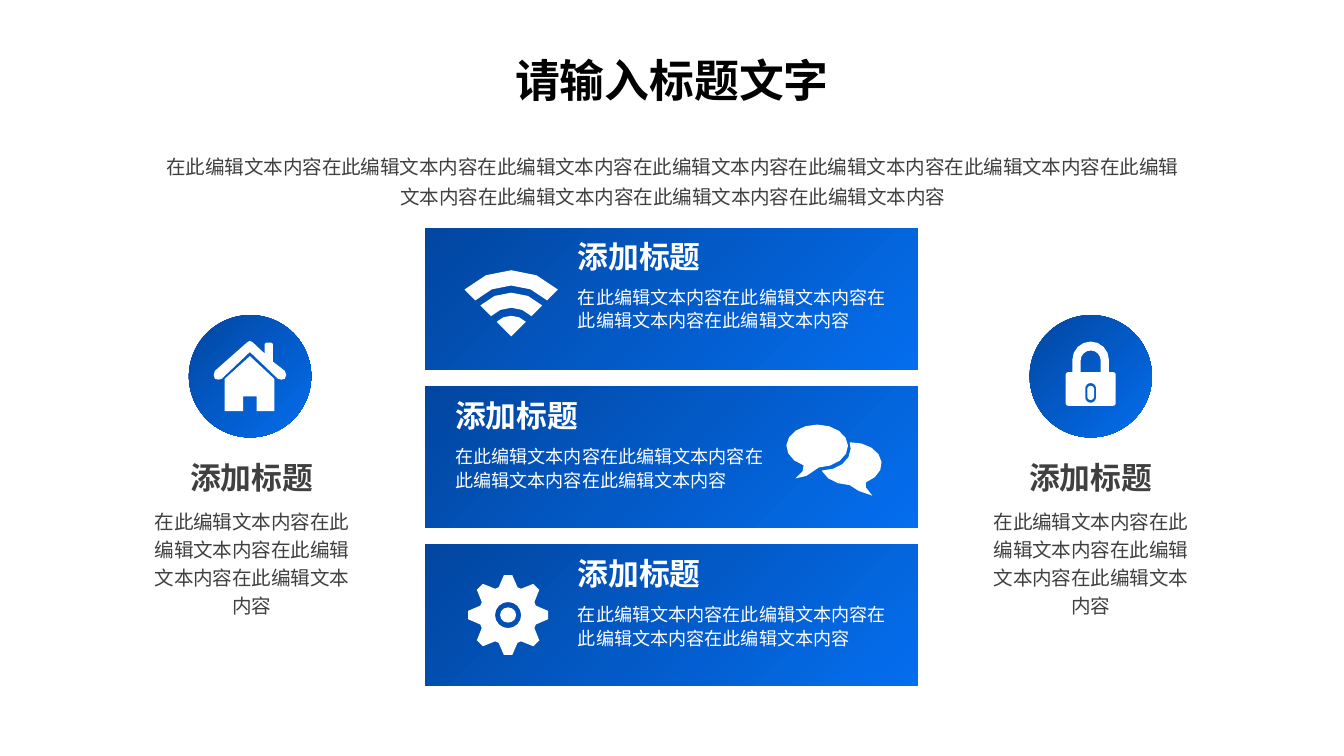
"""Build a slide of three icon panels between two icon columns."""
from dataclasses import dataclass
from math import cos, radians, sin

from lxml import etree
from pptx import Presentation
from pptx import util as u
from pptx.dml.color import RGBColor
from pptx.enum import shapes, text
from pptx.oxml import ns

FONT = "Noto Sans CJK SC"
WHITE, GREY, BLACK = "FFFFFF", "404040", "000000"
DEEP_BLUE, BRIGHT_BLUE = "0246A0", "046EEE"
PHRASE = "在此编辑文本内容"
HEADING = "添加标题"
Outline = list[tuple[float, float]]


@dataclass
class Style:
    size: float
    color: str
    bold: bool = False
    align: text.PP_ALIGN = text.PP_ALIGN.CENTER
    spacing: float = 1.0


@dataclass
class Panel:
    top: float
    text_left: float
    text_top: float


@dataclass
class Column:
    circle_left: float
    heading_left: float
    body_left: float


PANELS = (Panel(122.4, 304.2, 124.5), Panel(207, 238.5, 210), Panel(291.6, 304.2, 294.6))
COLUMNS = (Column(101.2, 89, 76.7), Column(551.6, 538.5, 526.2))


def rgb(color: str) -> RGBColor:
    return RGBColor.from_string(color)


def write(frame, words: str, style: Style, wrap: bool = True) -> None:
    frame.text = words
    frame.word_wrap = wrap
    frame.auto_size = text.MSO_AUTO_SIZE.SHAPE_TO_FIT_TEXT
    frame.vertical_anchor = text.MSO_ANCHOR.TOP
    frame.margin_left = frame.margin_right = u.Pt(5.4)
    frame.margin_top = frame.margin_bottom = u.Pt(2.7)
    paragraph = frame.paragraphs[0]
    paragraph.alignment, paragraph.line_spacing = style.align, style.spacing
    font = paragraph.font
    font.size, font.bold, font.name = u.Pt(style.size), style.bold, FONT
    font.color.rgb = rgb(style.color)
    properties = paragraph._p.pPr.find(ns.qn("a:defRPr"))
    etree.SubElement(properties, ns.qn("a:ea"), typeface=FONT)


def add_text(slide, left: float, top: float, width: float, height: float,
             words: str, style: Style) -> None:
    box = slide.shapes.add_textbox(*map(u.Pt, (left, top, width, height)))
    write(box.text_frame, words, style)


def add_blue(slide, kind, left: float, top: float, width: float, height: float) -> None:
    shape = slide.shapes.add_shape(kind, *map(u.Pt, (left, top, width, height)))
    shape.shadow.inherit = False
    shape.line.fill.background()
    shape.fill.gradient()
    shape.fill.gradient_angle = 315
    for stop, color in zip(shape.fill.gradient_stops, (DEEP_BLUE, BRIGHT_BLUE)):
        stop.color.rgb = rgb(color)


def paint_white(shape) -> None:
    shape.shadow.inherit = False
    shape.line.fill.background()
    shape.fill.solid()
    shape.fill.fore_color.rgb = rgb(WHITE)


def add_icon(slide, *outlines: Outline) -> None:
    first, *others = [[(u.Pt(x), u.Pt(y)) for x, y in outline] for outline in outlines]
    builder = slide.shapes.build_freeform(*first[0])
    builder.add_line_segments(first[1:])
    for outline in others:
        builder.move_to(*outline[0])
        builder.add_line_segments(outline[1:])
    paint_white(builder.convert_to_shape())


def arc(x: float, y: float, rx: float, ry: float, start: float, end: float) -> Outline:
    steps = max(2, round(abs(end - start) / 22.5))
    angles = [radians(start + (end - start) * i / steps) for i in range(steps + 1)]
    return [(x + rx * cos(a), y + ry * sin(a)) for a in angles]


def add_wifi(slide) -> None:
    x, y = 273.9, 180.2
    add_icon(slide, [(x, y)] + arc(x, y, 11, 11, 225, 315))
    for outer, inner in ((23.4, 15.3), (35.4, 27.2)):
        add_icon(slide, arc(x, y, outer, outer, 225, 315) + arc(x, y, inner, inner, 315, 225))


def add_chat(slide) -> None:
    add_icon(slide, arc(455.8, 248.4, 16.5, 11.5, -92, 61) + [(463.8, 261), (467.3, 265.5), (460, 263)]
             + arc(455.8, 248.4, 16.5, 11.5, 92, 160) + arc(440.6, 240.5, 15.1, 11.5, 90, 0))
    add_icon(slide, arc(437.8, 239, 16.5, 11.5, 116, 447) + [(432, 255), (426.2, 256.3), (430, 252.5)])


def add_gear(slide) -> None:
    x, y = 272.2, 329.5
    corners = ((-18.7, 15.7), (-6, 21.5), (6, 21.5), (18.7, 15.7))
    teeth = [(x + r * cos(radians(turn + a)), y + r * sin(radians(turn + a)))
             for turn in range(0, 360, 45) for a, r in corners]
    add_icon(slide, teeth, arc(x, y, 7, 7, 0, 360))
    hub = slide.shapes.add_shape(shapes.MSO_SHAPE.OVAL, *map(u.Pt, (x - 4.3, y - 4.1, 8.6, 8.2)))
    paint_white(hub)


def add_house(slide) -> None:
    body = [(133.9, 190.8), (147, 203), (147, 220.3), (137.5, 220.3), (137.5, 212.4),
            (130.3, 212.4), (130.3, 220.3), (120.4, 220.3), (120.4, 203)]
    roof = [(133.9, 188.6), (118.8, 203), (117, 203.4), (115.2, 203), (114.5, 200.9),
            (115.2, 198.7), (132.5, 183.4), (133.9, 182.6), (135.4, 183.4), (141.8, 189.4),
            (141.8, 184.3), (142.6, 183.6), (145.4, 183.6), (146.2, 184.3), (146.2, 193.7),
            (152.6, 198.7), (153.4, 200.9), (152.6, 203), (150.8, 203.4), (149, 203)]
    add_icon(slide, body, roof)


def add_lock(slide) -> None:
    x, shoulder, foot = 584.3, 199.4, 217.4
    case = (arc(x - 12, foot - 1.4, 1.4, 1.4, 90, 180) + arc(x - 12, shoulder + 1.4, 1.4, 1.4, 180, 270)
            + [(x - 9.8, shoulder)] + arc(x, 192.8, 9.8, 9.8, 180, 360) + [(x + 9.8, shoulder)]
            + arc(x + 12, shoulder + 1.4, 1.4, 1.4, 270, 360) + arc(x + 12, foot - 1.4, 1.4, 1.4, 0, 90))
    opening = [(x - 5.4, shoulder)] + arc(x, 193.2, 5.4, 5.4, 180, 360) + [(x + 5.4, shoulder)]
    slot, pin = [arc(x, 210.5 - rise, r, r, 180, 360) + arc(x, 210.5 + rise, r, r, 0, 180)
                 for rise, r in ((2.4, 2.9), (2, 1.8))]
    add_icon(slide, case, opening, slot)
    add_icon(slide, pin)


def main() -> None:
    deck = Presentation()
    deck.slide_width, deck.slide_height = u.Pt(720), u.Pt(405)
    slide = deck.slides.add_slide(deck.slide_layouts[5])

    title = slide.shapes.title
    title.left, title.top, title.width, title.height = map(u.Pt, (268.4, 25.7, 183, 35.8))
    write(title.text_frame, "请输入标题文字", Style(24, BLACK, True), wrap=False)

    for panel in PANELS:
        add_blue(slide, shapes.MSO_SHAPE.RECTANGLE, 227.8, panel.top, 264, 75.7)
    for column in COLUMNS:
        add_blue(slide, shapes.MSO_SHAPE.OVAL, column.circle_left, 168.8, 65.5, 65.5)
    for add in (add_chat, add_gear, add_wifi, add_lock, add_house):
        add(slide)

    add_text(slide, 79.4, 76.5, 562.3, 38.2, PHRASE * 10, Style(10.5, GREY, spacing=1.3))
    for column in COLUMNS:
        add_text(slide, column.heading_left, 243, 91.4, 25.2, HEADING, Style(16.5, GREY, True))
        add_text(slide, column.body_left, 268, 116.6, 66.2, PHRASE * 4,
                 Style(10.5, GREY, spacing=1.2))
    left = text.PP_ALIGN.LEFT
    for panel in PANELS:
        add_text(slide, panel.text_left, panel.text_top, 91.4, 25.2, HEADING,
                 Style(16.5, WHITE, True, left))
        add_text(slide, panel.text_left, panel.text_top + 24.9, 181.4, 31.7, PHRASE * 4,
                 Style(9.7, WHITE, align=left, spacing=1.1))
    deck.save("out.pptx")


if __name__ == "__main__":
    main()
